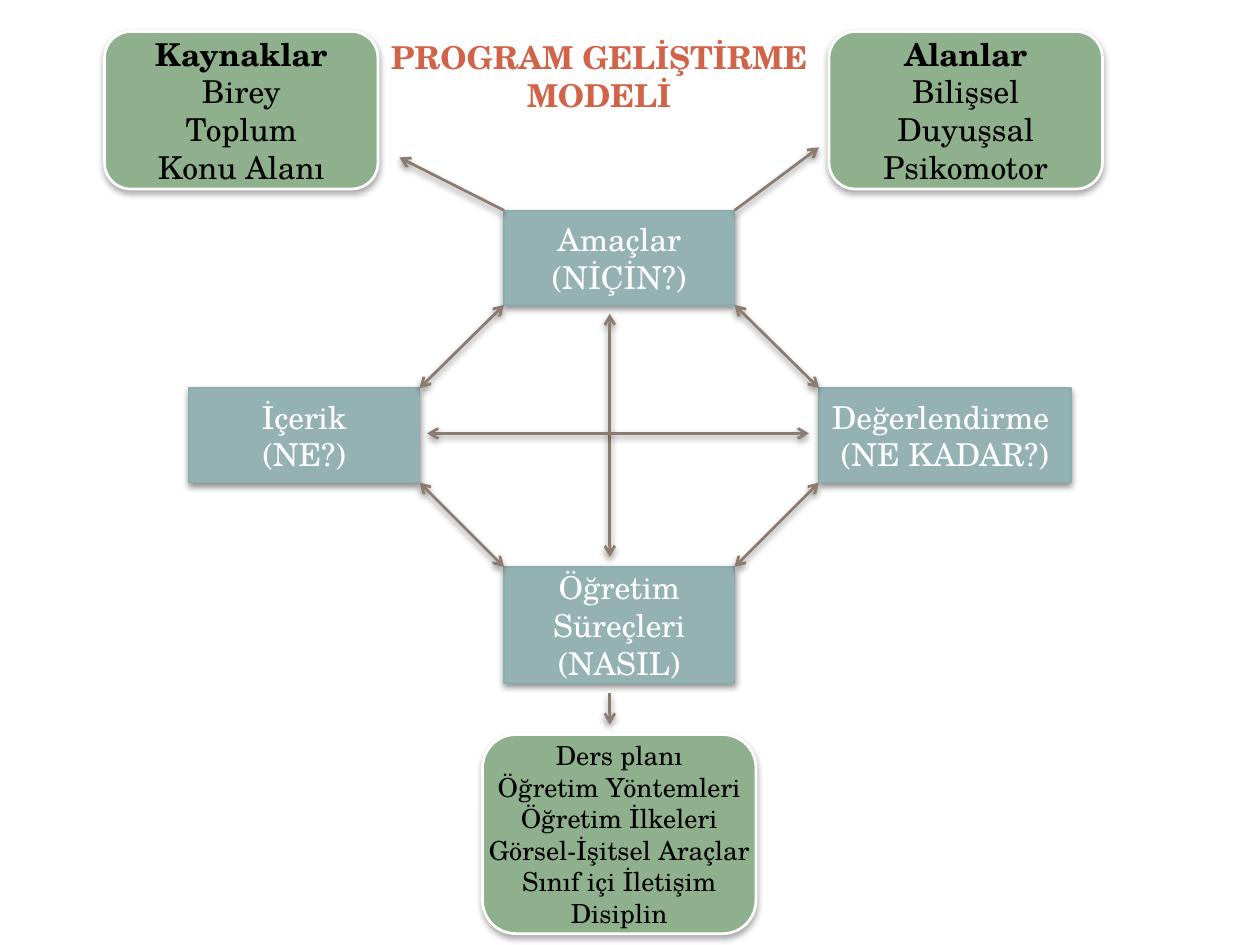
from dataclasses import dataclass

from lxml.etree import SubElement
from pptx import Presentation
from pptx.dml.color import RGBColor
from pptx.enum.shapes import MSO_CONNECTOR, MSO_SHAPE
from pptx.enum.text import MSO_ANCHOR, PP_ALIGN
from pptx.oxml.ns import qn
from pptx.util import Inches, Pt

Point = tuple[float, float]


@dataclass(frozen=True)
class Theme:
    font: str = "TeX Gyre Schola"
    text_size: float = 18
    small_size: float = 15
    title: str = "D16349"
    arrow: str = "8C7B70"
    arrow_width: float = 1.57


@dataclass(frozen=True)
class BoxStyle:
    preset: MSO_SHAPE
    fill: str
    line: str
    line_width: float
    text: str
    shadow_opacity: int


@dataclass(frozen=True)
class Box:
    left: float
    top: float
    width: float
    height: float
    lines: tuple[str, ...]
    style: BoxStyle
    size: float = 18
    bold_first: bool = False
    wrap: bool = True

    def corner(self, horizontal: int, vertical: int) -> Point:
        """Return a corner: 0 is left or top, 1 is right or bottom."""
        return self.left + horizontal * self.width, self.top + vertical * self.height


@dataclass(frozen=True)
class Arrow:
    start: Point
    end: Point
    both_ends: bool = True


THEME = Theme()
STAGE = BoxStyle(MSO_SHAPE.RECTANGLE, "95B2B3", "8CADAE", 0.75, "FFFFFF", 45)
DETAIL = BoxStyle(MSO_SHAPE.ROUNDED_RECTANGLE, "8FB08C", "FFFFFF", 1.57, "000000", 35)

AIMS = Box(4, 1.67, 1.83, 0.75, ("Amaçlar", "(NİÇİN?)"), STAGE)
CONTENT = Box(1.5, 3.08, 1.83, 0.75, ("İçerik", "(NE?)"), STAGE)
TEACHING = Box(4, 4.5, 1.83, 0.92, ("Öğretim", "Süreçleri (NASIL)"), STAGE)
EVALUATION = Box(6.5, 3.08, 2, 0.75, ("Değerlendirme ", "(NE KADAR?)"), STAGE)
STAGES = (AIMS, CONTENT, TEACHING, EVALUATION)
DETAILS = (
    Box(0.83, 0.25, 2.17, 1.25, ("Kaynaklar", "Birey", "Toplum", "Konu Alanı"),
        DETAIL, bold_first=True),
    Box(6.58, 0.25, 2.17, 1.25, ("Alanlar", "Bilişsel", "Duyuşsal", "Psikomotor"),
        DETAIL, bold_first=True),
    Box(3.83, 5.83, 2.17, 1.58,
        ("Ders planı", "Öğretim Yöntemleri", "Öğretim İlkeleri",
         "Görsel-İşitsel Araçlar", "Sınıf içi İletişim", "Disiplin"),
        DETAIL, size=THEME.small_size, wrap=False),
)
AXIS_X, AXIS_Y = 4.84, 3.44
ARROWS = (
    Arrow(AIMS.corner(0, 1), CONTENT.corner(1, 0)),
    Arrow(EVALUATION.corner(0, 1), TEACHING.corner(1, 0)),
    Arrow(AIMS.corner(1, 1), EVALUATION.corner(0, 0)),
    Arrow(CONTENT.corner(1, 1), TEACHING.corner(0, 0)),
    Arrow((AXIS_X, 2.49), (AXIS_X, 4.42)),
    Arrow((3.39, AXIS_Y), (6.42, AXIS_Y)),
    Arrow((AXIS_X, 5.5), (AXIS_X, 5.75), both_ends=False),
    Arrow(AIMS.corner(0, 0), (3.17, 1.25), both_ends=False),
    Arrow(AIMS.corner(1, 0), (6.5, 1.17), both_ends=False),
)


def add_shadow(properties, opacity: int) -> None:
    """Put a soft shadow straight below the element."""
    effects = properties.find(qn("a:effectLst"))
    if effects is None:
        effects = SubElement(properties, qn("a:effectLst"))
    shadow = SubElement(effects, qn("a:outerShdw"), blurRad=str(Pt(4)),
                        dist=str(Pt(2)), dir="5400000", rotWithShape="0")
    color = SubElement(shadow, qn("a:srgbClr"), val="000000")
    SubElement(color, qn("a:alpha"), val=str(opacity * 1000))


def write_lines(frame, lines: tuple[str, ...], size: float, color: str,
                bold: tuple[bool, ...]) -> None:
    for index, (line, is_bold) in enumerate(zip(lines, bold)):
        paragraph = frame.add_paragraph() if index else frame.paragraphs[0]
        paragraph.alignment = PP_ALIGN.CENTER
        run = paragraph.add_run()
        run.text = line
        run.font.color.rgb = RGBColor.from_string(color)
        font_format = {"name": THEME.font, "size": Pt(size), "bold": is_bold}
        for name, value in font_format.items():
            setattr(run.font, name, value)


def draw_box(slide, box: Box) -> None:
    style = box.style
    shape = slide.shapes.add_shape(
        style.preset, Inches(box.left), Inches(box.top),
        Inches(box.width), Inches(box.height))
    shape.fill.solid()
    shape.fill.fore_color.rgb = RGBColor.from_string(style.fill)
    shape.line.color.rgb = RGBColor.from_string(style.line)
    shape.line.width = Pt(style.line_width)
    shape.shadow.inherit = False
    add_shadow(shape._element.spPr, style.shadow_opacity)
    frame = shape.text_frame
    frame.word_wrap = box.wrap
    frame.vertical_anchor = MSO_ANCHOR.MIDDLE
    bold = tuple(box.bold_first and index == 0 for index in range(len(box.lines)))
    write_lines(frame, box.lines, box.size, style.text, bold)


def draw_arrow(slide, arrow: Arrow) -> None:
    connector = slide.shapes.add_connector(
        MSO_CONNECTOR.STRAIGHT, *map(Inches, arrow.start + arrow.end))
    connector.line.color.rgb = RGBColor.from_string(THEME.arrow)
    connector.line.width = Pt(THEME.arrow_width)
    properties = connector._element.spPr
    ends = ("a:headEnd", "a:tailEnd") if arrow.both_ends else ("a:tailEnd",)
    for end in ends:
        SubElement(properties.find(qn("a:ln")), qn(end), type="arrow")
    add_shadow(properties, 45)


def draw_title(slide) -> None:
    frame = slide.shapes.add_textbox(
        Inches(2.67), Inches(0.25), Inches(4.17), Inches(0.71)).text_frame
    frame.word_wrap = True
    write_lines(frame, ("PROGRAM GELİŞTİRME MODELİ",), THEME.text_size,
                THEME.title, (True,))


def main() -> None:
    presentation = Presentation()
    presentation.slide_width = Inches(10)
    presentation.slide_height = Inches(7.5)
    slide = presentation.slides.add_slide(presentation.slide_layouts[6])
    for box in STAGES + DETAILS:
        draw_box(slide, box)
    for arrow in ARROWS:
        draw_arrow(slide, arrow)
    draw_title(slide)
    presentation.save("out.pptx")


if __name__ == "__main__":
    main()
